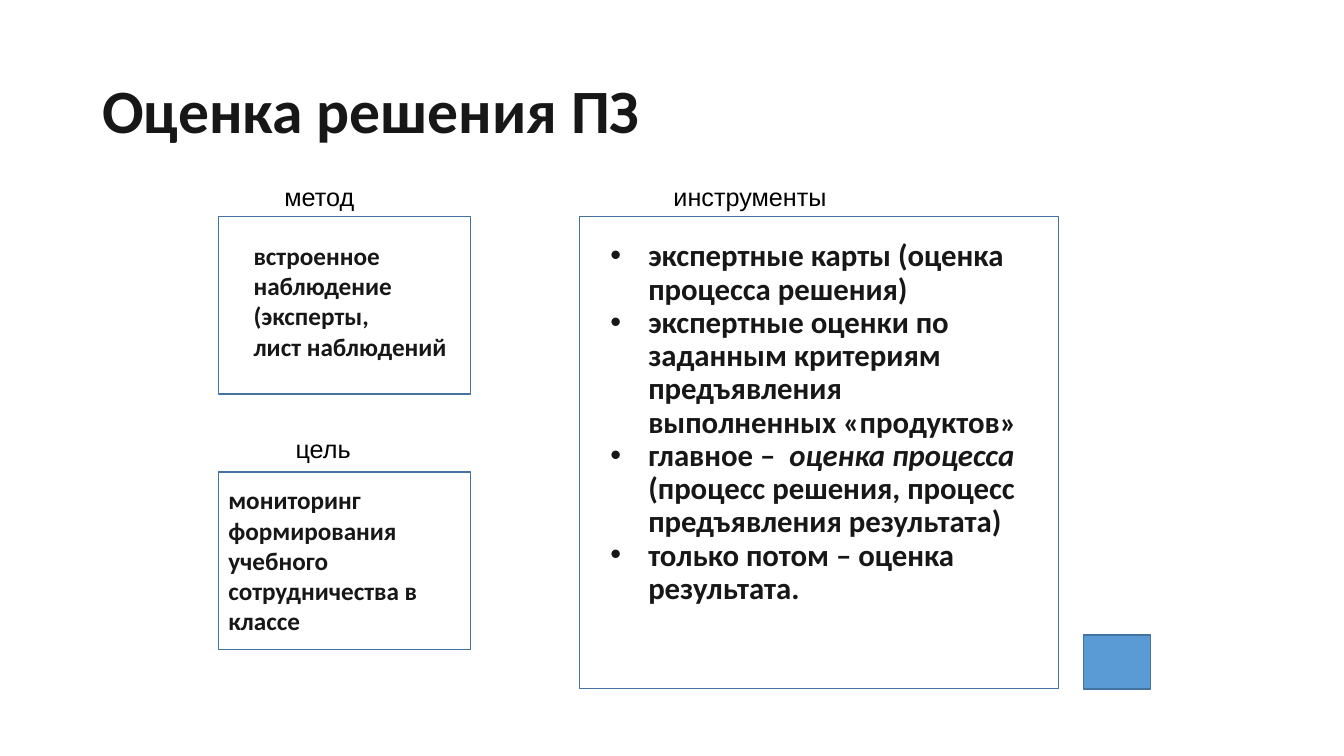
from lxml import etree
from pptx import Presentation, util as u
from pptx.dml.color import RGBColor
from pptx.enum import shapes, text
from pptx.oxml.ns import qn

INK = RGBColor(0x18, 0x17, 0x17)
BLACK = RGBColor(0, 0, 0)
OUTLINE = RGBColor(0x43, 0x73, 0x9E)
BLUE = RGBColor(0x5B, 0x9B, 0xD5)
COLUMNS, ROWS = 160, 90


def add_run(paragraph, wording, font="Calibri", size=18, color=INK, bold=True, italic=False):
    run = paragraph.add_run()
    run.text = wording
    run.font.name, run.font.size = font, u.Pt(size)
    run.font.color.rgb = color
    run.font.bold, run.font.italic = bold, italic


class Board:
    """Draws on one slide, with lengths in grid columns and rows."""

    def __init__(self, deck):
        self.slide = deck.slides.add_slide(deck.slide_layouts[6])
        self.column = deck.slide_width / COLUMNS
        self.row = deck.slide_height / ROWS

    def place(self, left, top, width, height):
        return (round(left * self.column), round(top * self.row),
                round(width * self.column), round(height * self.row))

    def passage(self, area, paragraphs, anchor=text.MSO_ANCHOR.TOP, spacing=1.0,
                indent=0, bullet=None, **style):
        frame = self.slide.shapes.add_textbox(*self.place(*area)).text_frame
        frame.word_wrap = True
        frame.vertical_anchor = anchor
        for number, pieces in enumerate(paragraphs):
            paragraph = frame.paragraphs[0] if number == 0 else frame.add_paragraph()
            paragraph.line_spacing = spacing
            properties = paragraph._p.get_or_add_pPr()
            margin = round(indent * self.column)
            properties.set("marL", str(margin))
            if bullet:
                properties.set("indent", str(-margin))
                etree.SubElement(properties, qn("a:buFont")).set("typeface", "Arial")
                etree.SubElement(properties, qn("a:buChar")).set("char", bullet)
            for wording, italic in pieces:
                add_run(paragraph, wording, italic=italic, **style)

    def label(self, area, wording, indent=0):
        self.passage(area, [[(wording, False)]], indent=indent,
                     font="Arial", color=BLACK, bold=False)

    def block(self, area, kind=shapes.MSO_SHAPE.RECTANGLE, fill=None):
        block = self.slide.shapes.add_shape(kind, *self.place(*area))
        block.shadow.inherit = False
        block.line.color.rgb = OUTLINE
        block.line.width = u.Pt(1)
        if fill is None:
            block.fill.background()
        else:
            block.fill.solid()
            block.fill.fore_color.rgb = fill


def main():
    deck = Presentation()
    deck.slide_width, deck.slide_height = u.Inches(13.33), u.Inches(7.5)
    board = Board(deck)

    board.passage((11, 4.8, 138, 17.4), [[("Оценка решения ПЗ", False)]],
                  anchor=text.MSO_ANCHOR.MIDDLE, spacing=0.9, size=44)

    board.label((31, 21, 21, 4.8), "метод", indent=1.67)
    board.passage((29, 28, 28, 15.7), [[("встроенное наблюдение (эксперты,", False)],
                                       [("лист наблюдений", False)]])
    board.label((34, 51, 12, 4.8), "цель")
    board.passage((26, 57.1, 31, 19.3),
                  [[("мониторинг формирования учебного сотрудничества в классе", False)]])
    for top in (25.8, 56.2):
        board.block((26, top, 30, 21.1))

    instruments = [
        [("экспертные карты (оценка процесса решения)", False)],
        [("экспертные оценки по заданным критериям предъявления "
          "выполненных «продуктов»", False)],
        [("главное –  ", False), ("оценка процесса", True),
         (" (процесс решения, процесс предъявления результата)", False)],
        [("только потом – оценка результата.", False)],
    ]
    board.passage((71.5, 28, 51, 45.2), instruments, spacing=0.9, indent=4.5,
                  bullet="•", size=22)
    board.label((79, 21, 36, 4.8), "инструменты")
    board.block((69, 25.8, 57, 56.2))
    board.block((129, 75.6, 8, 6.4), shapes.MSO_SHAPE.ACTION_BUTTON_CUSTOM, BLUE)

    deck.save("out.pptx")


if __name__ == "__main__":
    main()
